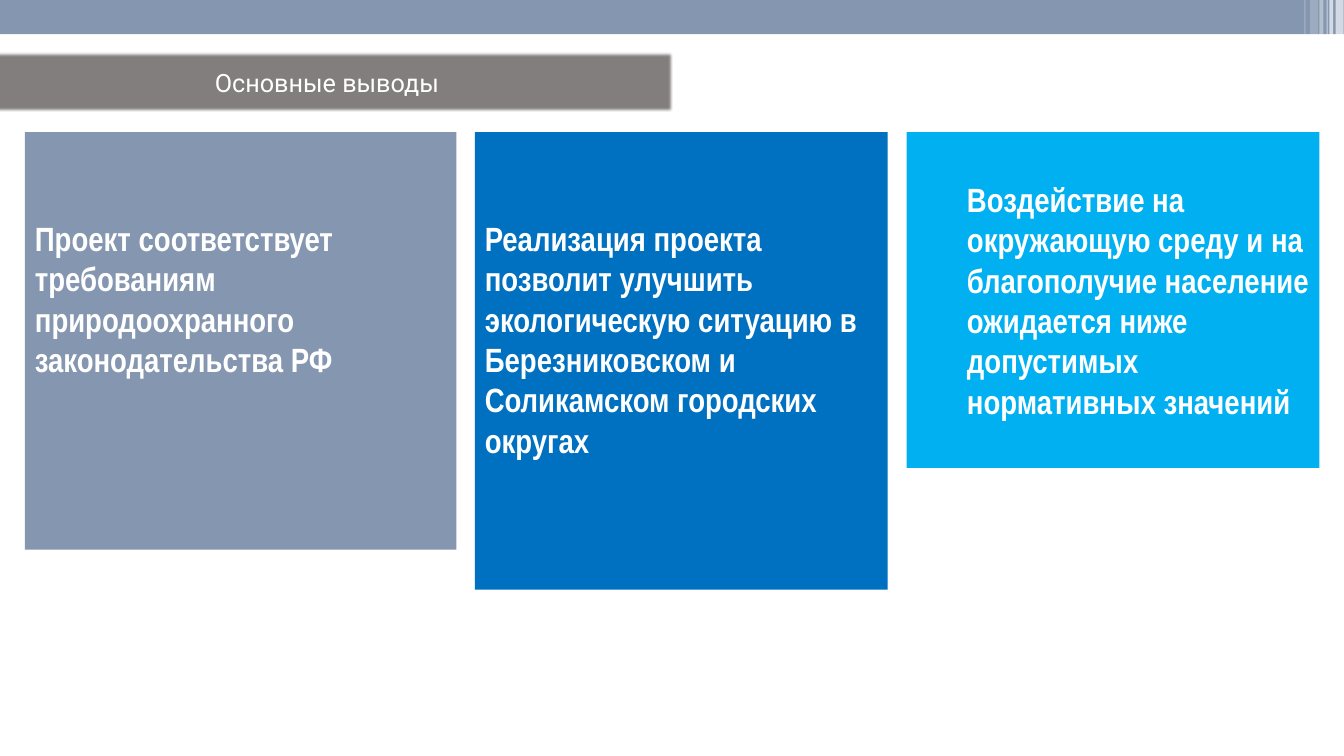
from dataclasses import dataclass

from lxml import etree
from pptx import Presentation
from pptx import util as u
from pptx.dml.color import RGBColor
from pptx.enum import shapes, text
from pptx.oxml.ns import qn


@dataclass(frozen=True)
class Theme:
    slate: str = "8496B0"
    grey: str = "767171"
    blue: str = "0070C0"
    sky: str = "00B0F0"
    white: str = "FFFFFF"
    title_font: str = "Roboto"
    body_font: str = "Arial Narrow"
    title_size: int = 18
    body_size: int = 24


THEME = Theme()


def apply_format(target, values):
    for name, value in values.items():
        setattr(target, name, value)


def place(shape, left, top, width, height):
    apply_format(shape, {
        "left": u.Cm(left), "top": u.Cm(top),
        "width": u.Cm(width), "height": u.Cm(height),
    })


def paint(shape, color, opacity=100):
    shape.fill.solid()
    shape.fill.fore_color.rgb = RGBColor.from_string(color)
    shape.line.fill.background()
    if opacity < 100:
        color_element = shape.fill._xPr.find(qn("a:solidFill"))[0]
        etree.SubElement(color_element, qn("a:alpha"), val=str(opacity * 1000))


def add_block(slide, box, color, opacity=100):
    shape = slide.shapes.add_shape(shapes.MSO_SHAPE.RECTANGLE, *map(u.Cm, box))
    shape.shadow.inherit = False
    paint(shape, color, opacity)
    return shape


def write(shape, wording, frame_format, alignment, font_format):
    frame = shape.text_frame
    apply_format(frame, {
        "word_wrap": True, "auto_size": text.MSO_AUTO_SIZE.NONE, **frame_format,
    })
    paragraph = frame.paragraphs[0]
    paragraph.alignment = alignment
    run = paragraph.add_run()
    run.text = wording
    apply_format(run.font, font_format)
    run.font.color.rgb = RGBColor.from_string(THEME.white)


def add_header(slide):
    add_block(slide, (0, 0, 33.87, 0.86), THEME.slate)
    strips = [
        (33.66, 0.2, 1.73, 65), (33.5, 0.1, 1.73, 65), (33.43, 0.03, 1.73, 60),
        (33.25, 0.1, 1.73, 40), (33.02, 0.2, 1.63, 20), (32.87, 0.03, 1.63, 30),
    ]
    for left, width, height, opacity in strips:
        add_block(slide, (left, 0, width, height), THEME.white, opacity)


def format_title(slide, wording):
    title = slide.shapes.title
    place(title, -0.46, 1.32, 17.4, 1.5)
    paint(title, THEME.grey, 90)
    effects = etree.SubElement(title._element.spPr, qn("a:effectLst"))
    etree.SubElement(effects, qn("a:softEdge"), rad=str(u.Pt(2)))
    write(title, wording, {"vertical_anchor": text.MSO_ANCHOR.MIDDLE},
          text.PP_ALIGN.CENTER,
          {"name": THEME.title_font, "size": u.Pt(THEME.title_size)})


def add_conclusion(slide, left, width, height, color, wording, frame_format):
    card = add_block(slide, (left, 3.33, width, height), color)
    write(card, wording, frame_format, text.PP_ALIGN.LEFT,
          {"name": THEME.body_font, "size": u.Pt(THEME.body_size), "bold": True})


def main():
    presentation = Presentation()
    apply_format(presentation, {"slide_width": u.Cm(33.87), "slide_height": u.Cm(19.05)})
    slide = presentation.slides.add_slide(presentation.slide_layouts[5])
    add_header(slide)
    format_title(slide, "Основные выводы")

    lowered = {"vertical_anchor": text.MSO_ANCHOR.TOP, "margin_top": u.Cm(2.16)}
    indented = {"vertical_anchor": text.MSO_ANCHOR.MIDDLE, "margin_left": u.Cm(1.52)}
    conclusions = [
        (0.63, 10.87, 10.52, THEME.slate,
         "Проект соответствует требованиям природоохранного законодательства РФ",
         lowered),
        (11.97, 10.4, 11.53, THEME.blue,
         "Реализация проекта позволит улучшить экологическую ситуацию в "
         "Березниковском и Соликамском городских округах", lowered),
        (22.85, 10.4, 8.46, THEME.sky,
         "Воздействие на окружающую среду и на благополучие население "
         "ожидается ниже допустимых нормативных значений", indented),
    ]
    for conclusion in conclusions:
        add_conclusion(slide, *conclusion)
    presentation.save("out.pptx")


if __name__ == "__main__":
    main()
